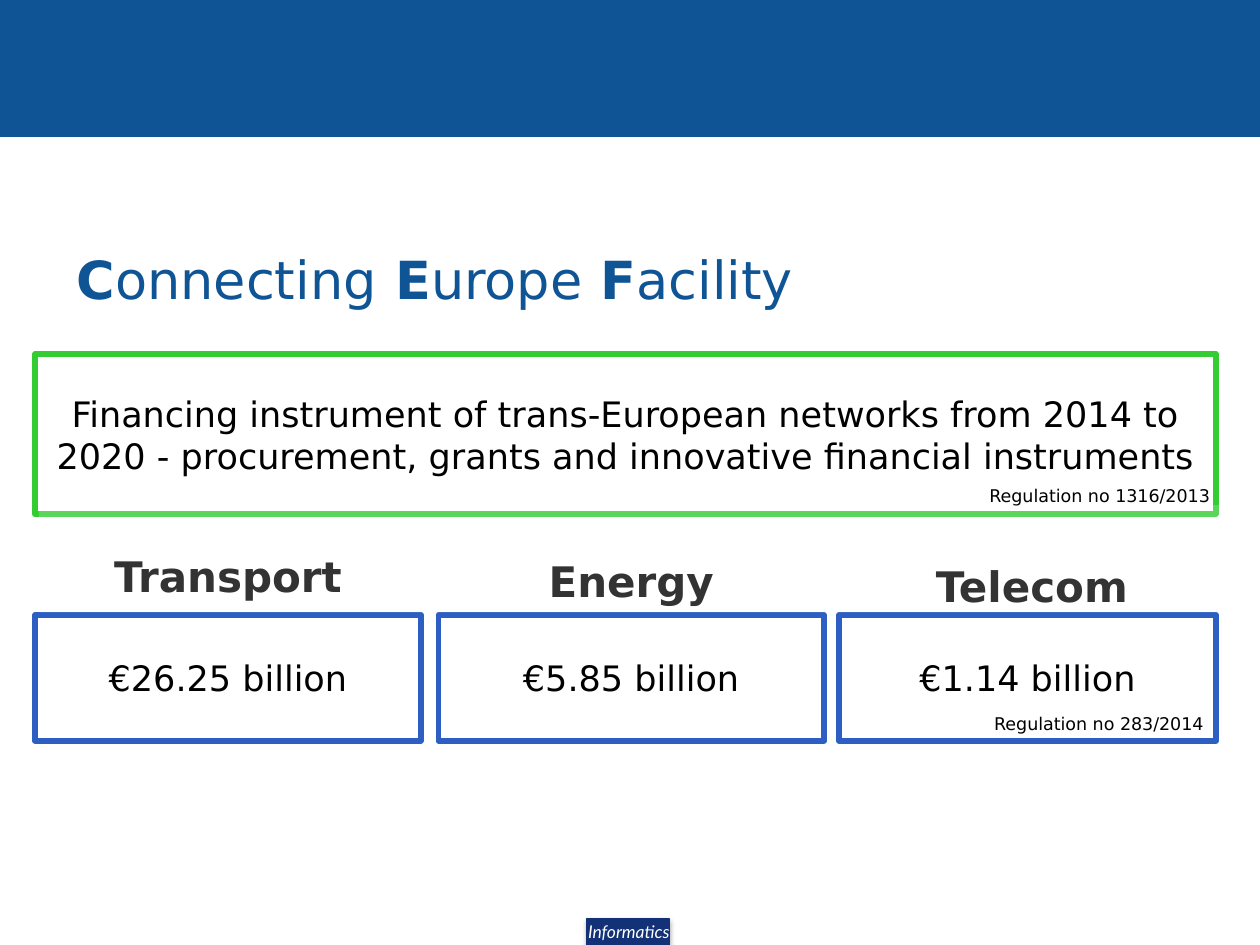
from dataclasses import dataclass

from lxml import etree
from pptx import Presentation
from pptx.dml.color import RGBColor
from pptx.enum.shapes import MSO_SHAPE
from pptx.enum.text import MSO_ANCHOR, PP_ALIGN
from pptx.oxml.ns import qn
from pptx.util import Inches, Pt

RECT = MSO_SHAPE.RECTANGLE
LEFT, CENTER, RIGHT = PP_ALIGN.LEFT, PP_ALIGN.CENTER, PP_ALIGN.RIGHT
MIDDLE, TOP = MSO_ANCHOR.MIDDLE, MSO_ANCHOR.TOP


@dataclass(frozen=True)
class Theme:
    font: str = "DejaVu Sans"
    badge_font: str = "Lato"
    blue: str = "0F5494"
    navy: str = "133176"
    green: str = "33CC33"
    frame: str = "2D5EC1"
    white: str = "FFFFFF"
    black: str = "000000"
    title: int = 30
    heading: int = 24
    body: int = 20
    small: int = 10
    hairline: float = 0.75
    border: float = 3.25


def write(tf, text, *, size, color, font, align=CENTER, anchor=TOP,
          italic=False, bold=False):
    """Write one paragraph; text is a string or a list of (text, bold)."""
    tf.word_wrap = True
    tf.vertical_anchor = anchor
    p = tf.paragraphs[0]
    p.alignment = align
    runs = [(text, bold)] if isinstance(text, str) else text
    for words, heavy in runs:
        r = p.add_run()
        r.text = words
        r.font.name = font
        r.font.size = Pt(size)
        r.font.bold = heavy
        r.font.italic = italic
        r.font.color.rgb = RGBColor.from_string(color)


class SlideBuilder:
    def __init__(self, s, theme):
        self.s = s
        self.theme = theme

    def title(self, runs, box):
        t = self.theme
        sp = self.s.shapes.title
        sp.left, sp.top, sp.width, sp.height = map(Inches, box)
        write(sp.text_frame, runs, size=t.title, color=t.blue, font=t.font,
              align=LEFT, anchor=MIDDLE)

    def rect(self, box, fill=None, alpha=100, line=None, width=Theme.hairline):
        sp = self.s.shapes.add_shape(RECT, *map(Inches, box))
        sp.shadow.inherit = False
        if fill:
            sp.fill.solid()
            sp.fill.fore_color.rgb = RGBColor.from_string(fill)
            if alpha < 100:
                clr = sp.fill._xPr.find(".//" + qn("a:srgbClr"))
                etree.SubElement(clr, qn("a:alpha"), val=str(alpha * 1000))
        else:
            sp.fill.background()
        if line:
            sp.line.color.rgb = RGBColor.from_string(line)
            sp.line.width = Pt(width)
        else:
            sp.line.fill.background()
        return sp

    def shadow(self, sp, blur, distance, alpha):
        """Cast a soft black shadow straight down."""
        effects = sp._element.spPr.find(qn("a:effectLst"))
        shadow = etree.SubElement(
            effects, qn("a:outerShdw"), blurRad=str(Pt(blur)),
            dist=str(Pt(distance)), dir="5400000", rotWithShape="0")
        clr = etree.SubElement(shadow, qn("a:srgbClr"), val=self.theme.black)
        etree.SubElement(clr, qn("a:alpha"), val=str(alpha * 1000))

    def framed(self, text, box, line, fill=None):
        t = self.theme
        sp = self.rect(box, fill, 55, line, t.border)
        write(sp.text_frame, text, size=t.body, color=t.black, font=t.font,
              anchor=MIDDLE)

    def label(self, text, box, **style):
        t = self.theme
        sp = self.s.shapes.add_textbox(*map(Inches, box))
        write(sp.text_frame, text,
              **{"size": t.small, "color": t.black, "font": t.font, **style})


def main():
    prs = Presentation()
    prs.slide_width, prs.slide_height = Inches(10), Inches(7.5)
    theme = Theme()
    b = SlideBuilder(prs.slides.add_slide(prs.slide_layouts[5]), theme)

    # Header band and footer badge
    b.rect((0, 0, 10, 1.08), theme.blue, line=theme.blue)
    badge = b.rect((4.66, 7.29, 0.65, 0.22), theme.navy, line=theme.navy)
    b.shadow(badge, blur=3.1, distance=1.8, alpha=35)
    b.label("Informatics", (4.4, 7.26, 1.18, 0.27), color=theme.white,
            font=theme.badge_font, italic=True)

    # Title with bold initials
    b.title([("C", True), ("onnecting", False), (" E", True),
             ("urope", False), (" F", True), ("acility", False)],
            (0.51, 1.7, 9, 1.02))

    # Instrument summary
    b.framed("Financing instrument of trans-European networks from 2014 to "
             "2020 - procurement, grants and innovative financial instruments",
             (0.28, 2.81, 9.37, 1.27), theme.green, theme.white)
    b.label("Regulation no 1316/2013", (7.18, 3.8, 2.52, 0.27), align=RIGHT)

    # Sector budgets: name, amount, left, frame width, heading top, fill
    sectors = [
        ("Telecom", "€1.14 billion", 6.66, 2.99, 4.4, theme.white),
        ("Energy", "€5.85 billion", 3.48, 3.06, 4.36, theme.white),
        ("Transport", "€26.25 billion", 0.28, 3.06, 4.32, None),
    ]
    for name, amount, left, width, top, fill in sectors:
        b.framed(amount, (left, 4.88, width, 1), theme.frame, fill)
        b.label(name, (left, top, 3.06, 0.5), size=theme.heading, bold=True)
    b.label("Regulation no 283/2014", (7.13, 5.61, 2.52, 0.27), align=RIGHT)

    # Pale veil that softens the sector headings
    b.rect((0.31, 4.01, 9.37, 0.85), theme.white, alpha=20)

    prs.save("out.pptx")


if __name__ == "__main__":
    main()
